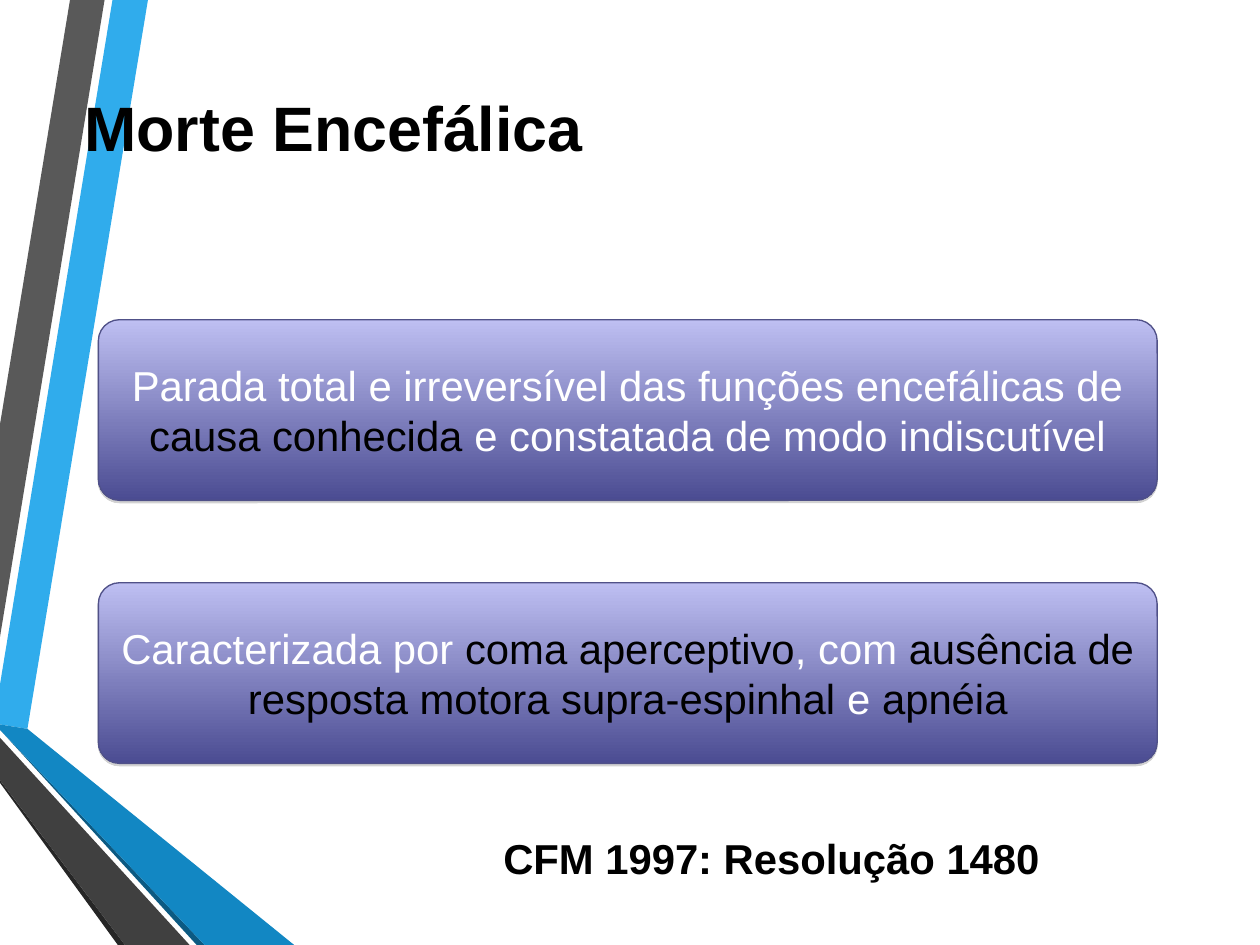
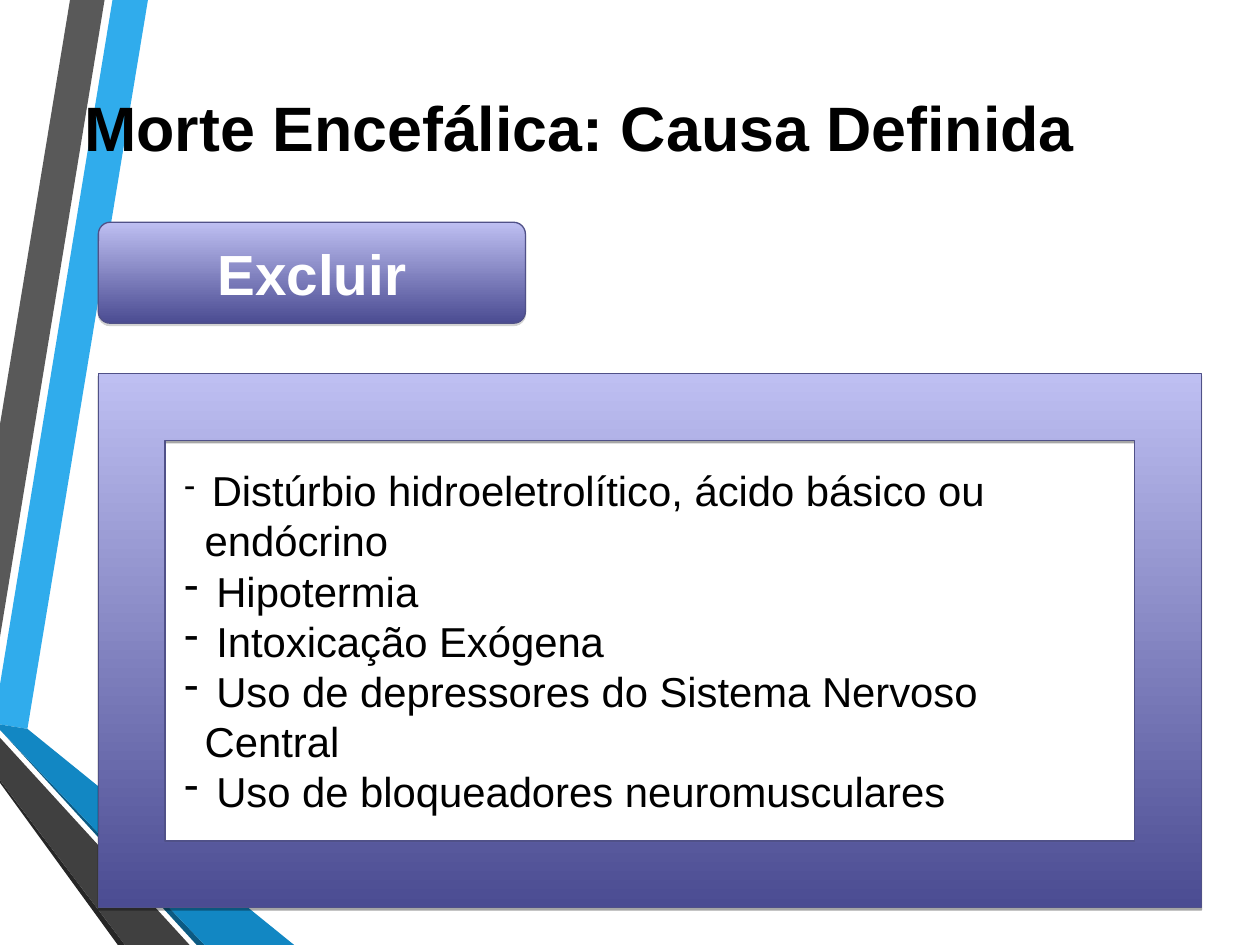
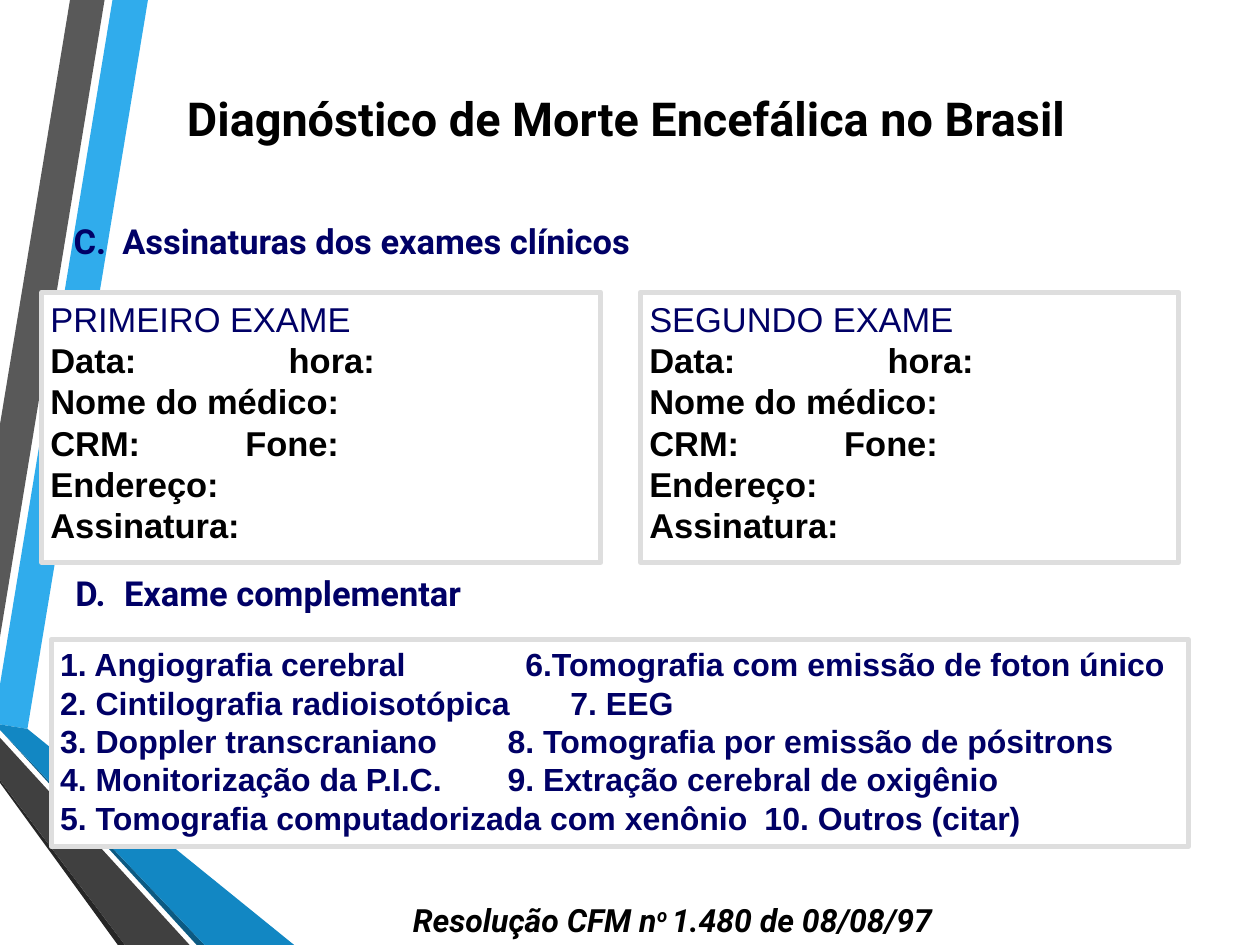
"""Build three slides on the diagnosis of brain death."""
from dataclasses import dataclass, field

from lxml import etree
from pptx import Presentation
from pptx.dml.color import RGBColor
from pptx.enum.shapes import MSO_SHAPE
from pptx.enum.text import MSO_ANCHOR, MSO_AUTO_SIZE, PP_ALIGN
from pptx.oxml.ns import qn
from pptx.util import Inches, Pt

RECTANGLE = MSO_SHAPE.RECTANGLE
ROUNDED = MSO_SHAPE.ROUNDED_RECTANGLE
FRAME = MSO_SHAPE.FRAME
TOP, MIDDLE = MSO_ANCHOR.TOP, MSO_ANCHOR.MIDDLE
LEFT, CENTER = PP_ALIGN.LEFT, PP_ALIGN.CENTER
NO_AUTOFIT = MSO_AUTO_SIZE.NONE
TITLE_ONLY = 5


def font_style(name, size, color, **extra):
    """Return the format values of one type style."""
    return {"name": name, "size": Pt(size), "color": color, **extra}


@dataclass(frozen=True)
class Theme:
    """Colours, type styles and insets shared by the slides."""

    black: str = "000000"
    white: str = "FFFFFF"
    navy: str = "000066"
    panel_top: str = "BEBFF2"
    panel_bottom: str = "4B4C92"
    panel_line: str = "505188"
    form_line: str = "DEDEDE"
    text_insets: tuple = (0.14, 0.08)
    panel_insets: tuple = (0.16, 0.08)
    form_insets: tuple = (0.1, 0.06)
    styles: dict = field(default_factory=lambda: {
        "title": font_style("Arial", 51, "000000", bold=True),
        "form title": font_style("Roboto", 38, "000000", bold=True),
        "panel": font_style("Arial", 34, "FFFFFF"),
        "strong": font_style("Arial", 34, "000000"),
        "panel heading": font_style("Arial", 46, "FFFFFF", bold=True),
        "source": font_style("Arial", 34, "000000", bold=True),
        "bullet gap": font_style("Cambria", 26, "000000"),
        "section": font_style("Roboto", 28, "000066", bold=True),
        "exam": font_style("Arial", 28, "000066"),
        "field": font_style("Arial", 28, "000000", bold=True),
        "test": font_style("Arial", 26, "000066", bold=True),
        "law": font_style("Roboto", 26, "000000", bold=True, italic=True),
    })


THEME = Theme()

RIBBON = (
    ("30ACEC", ((0, 7.73), (0, 8.18), (0.31, 8.23), (1.67, 0), (1.27, 0))),
    ("595959", ((1.18, 0), (0.79, 0), (0, 4.79), (0, 7.19))),
    ("262626", ((0, 8.81), (0, 8.84), (1.33, 10.67), (1.41, 10.67))),
    ("0C5A82", ((0, 8.24), (2.22, 10.67), (2.31, 10.67))),
    ("1287C3", ((0, 8.24), (2.31, 10.67), (3.32, 10.67), (0.31, 8.23), (0, 8.18))),
    ("404040", ((0, 8.81), (1.41, 10.67), (2.14, 10.67), (0, 8.33))),
)


@dataclass
class Line:
    """One paragraph: (text, style) runs, an optional tab stop and bullet."""

    runs: list
    tab: float = 0
    bullet: str = ""


def set_values(target, values):
    """Set each attribute of the target from a dict."""
    for attribute, value in values.items():
        setattr(target, attribute, value)


def inches(*lengths):
    """Convert lengths to EMU."""
    return [Inches(length) for length in lengths]


def rgb(color):
    """Return the colour object of a hex string."""
    return RGBColor.from_string(color)


def style_run(run, style):
    """Apply a named style, superscript when marked with a caret."""
    values = dict(THEME.styles[style.rstrip("^")])
    run.font.color.rgb = rgb(values.pop("color"))
    set_values(run.font, values)
    if style.endswith("^"):
        run.font._element.set("baseline", "31000")


def add_paragraph_marks(paragraph, line):
    """Add the bullet and the tab stop of a line."""
    properties = paragraph._p.get_or_add_pPr()
    if line.bullet:
        properties.set("marL", str(Inches(0.23)))
        properties.set("indent", str(-Inches(0.23)))
        etree.SubElement(properties, qn("a:buChar"), char=line.bullet)
    if line.tab:
        stops = etree.SubElement(properties, qn("a:tabLst"))
        etree.SubElement(stops, qn("a:tab"), pos=str(Inches(line.tab)), algn="l")


def write(shape, lines, insets=THEME.text_insets, anchor=TOP, align=LEFT):
    """Fill a shape with formatted lines."""
    side, end = inches(*insets)
    frame = shape.text_frame
    set_values(frame, {
        "word_wrap": True, "auto_size": NO_AUTOFIT, "vertical_anchor": anchor,
        "margin_left": side, "margin_right": side,
        "margin_top": end, "margin_bottom": end,
    })
    for index, line in enumerate(lines):
        paragraph = frame.add_paragraph() if index else frame.paragraphs[0]
        paragraph.alignment = align
        add_paragraph_marks(paragraph, line)
        for text, style in line.runs:
            run = paragraph.add_run()
            run.text = text
            style_run(run, style)


def add_title(slide, text, box, style="title", **layout):
    """Place and format the title placeholder."""
    title = slide.shapes.title
    set_values(title, dict(zip(("left", "top", "width", "height"), inches(*box))))
    write(title, [Line([(text, style)])], **layout)


def add_text(slide, box, lines):
    """Add a text box."""
    write(slide.shapes.add_textbox(*inches(*box)), lines)


def add_outlined(slide, kind, box, line_color, line_width):
    """Add a preset shape with an outline and no inherited shadow."""
    shape = slide.shapes.add_shape(kind, *inches(*box))
    shape.shadow.inherit = False
    shape.line.color.rgb = rgb(line_color)
    shape.line.width = Pt(line_width)
    return shape


def add_panel(slide, kind, box, corner, shadow_color):
    """Add a violet gradient panel with a thin shadow below."""
    panel = add_outlined(slide, kind, box, THEME.panel_line, 1.07)
    panel.adjustments[0] = corner
    panel.fill.gradient()
    panel.fill.gradient_angle = 270
    for stop, color in zip(panel.fill.gradient_stops, (THEME.panel_top, THEME.panel_bottom)):
        stop.color.rgb = rgb(color)
    effects = panel.element.spPr.find(qn("a:effectLst"))
    shadow = etree.SubElement(effects, qn("a:outerShdw"), blurRad="0",
                              dist=str(Pt(1.8)), dir="5400000", rotWithShape="0")
    tint = etree.SubElement(shadow, qn("a:srgbClr"), val=shadow_color)
    etree.SubElement(tint, qn("a:alpha"), val="35000")
    return panel


def add_statement(slide, box, runs):
    """Add a rounded panel with centred text."""
    panel = add_panel(slide, ROUNDED, box, 0.117, "808080")
    write(panel, [Line(runs)], THEME.panel_insets, MIDDLE, CENTER)


def add_form_box(slide, box, lines):
    """Add a white form box with a grey outline."""
    form = add_outlined(slide, RECTANGLE, box, THEME.form_line, 4.27)
    form.fill.solid()
    form.fill.fore_color.rgb = rgb(THEME.white)
    write(form, lines, THEME.form_insets)


def add_ribbon(layout, slide):
    """Build the folded ribbon and move it to the shared layout."""
    for number, (color, points) in enumerate(RIBBON, start=100):
        start, *others = [inches(*point) for point in points]
        builder = slide.shapes.build_freeform(*start)
        builder.add_line_segments(others, close=True)
        band = builder.convert_to_shape()
        band.shadow.inherit = False
        band.fill.solid()
        band.fill.fore_color.rgb = rgb(color)
        band.line.fill.background()
        band.element.nvSpPr.cNvPr.set("id", str(number))
        layout.shapes.element.append(band.element)


def build_definition(slide):
    """Define brain death."""
    add_title(slide, "Morte Encefálica", (0.81, 0.92, 12.39, 1.01))
    statements = (
        [("Parada total e irreversível das funções encefálicas de ", "panel"),
         ("causa conhecida ", "strong"),
         ("e constatada de modo indiscutível", "panel")],
        [("Caracterizada por ", "panel"), ("coma aperceptivo", "strong"),
         (", com ", "panel"),
         ("ausência de resposta motora supra-espinhal ", "strong"),
         ("e ", "panel"), ("apnéia", "strong")],
    )
    for row, runs in enumerate(statements):
        add_statement(slide, (1.11, 3.61 + row * 2.97, 11.95, 2.04), runs)
    add_text(slide, (5.54, 9.32, 7.52, 0.72),
             [Line([("CFM 1997: Resolução 1480", "source")])])


def build_exclusions(slide):
    """List the conditions to exclude."""
    add_title(slide, "Morte Encefálica: Causa Definida", (0.81, 0.92, 12.39, 1.01))
    add_statement(slide, (1.11, 2.51, 4.82, 1.14), [("Excluir", "panel heading")])
    add_panel(slide, FRAME, (1.11, 4.22, 12.45, 6.03), 0.125, THEME.black)
    conditions = (
        "Hipotermia", "Intoxicação Exógena",
        "Uso de depressores do Sistema Nervoso Central",
        "Uso de bloqueadores neuromusculares",
    )
    first = Line([(" ", "bullet gap"),
                  ("Distúrbio hidroeletrolítico, ácido básico ou endócrino", "strong")],
                 bullet="-")
    others = [Line([(f" {condition}", "strong")], bullet="-") for condition in conditions]
    add_text(slide, (1.94, 5.17, 10.85, 4.17), [first, *others])


def build_form(slide):
    """Show the signature and complementary exam parts of the form."""
    add_title(slide, "Diagnóstico de Morte Encefálica no Brasil", (0.73, 1, 12.68, 0.65),
              "form title", insets=(0, 0), anchor=MIDDLE, align=CENTER)
    fields = (("Data:\thora:", 2.69), ("Nome do médico:", 0), ("CRM:\tFone:", 2.2),
              ("Endereço:", 0), ("Assinatura:", 0))
    exams = (("PRIMEIRO EXAME", 0.47, 6.31), ("SEGUNDO EXAME", 7.23, 6.07))
    for exam, left, width in exams:
        lines = [Line([(label, "field")], tab) for label, tab in fields]
        add_form_box(slide, (left, 3.3, width, 3.05), [Line([(exam, "exam")]), *lines])
    sections = (("C.\tAssinaturas dos exames clínicos", 0.69, 2.41),
                ("D.\tExame complementar", 0.71, 6.38))
    for heading, left, top in sections:
        add_text(slide, (left, top, 8.17, 0.66), [Line([(heading, "section")], 0.55)])
    tests = (
        ("1. Angiografia cerebral\t6.Tomografia com emissão de foton único", 5.25),
        ("2. Cintilografia radioisotópica\t7. EEG", 5.76),
        ("3. Doppler transcraniano\t8. Tomografia por emissão de pósitrons", 5.05),
        ("4. Monitorização da P.I.C.\t9. Extração cerebral de oxigênio", 5.05),
        ("5. Tomografia computadorizada com xenônio\t10. Outros (citar)", 7.95),
    )
    add_form_box(slide, (0.58, 7.22, 12.83, 2.34),
                 [Line([(test, "test")], tab) for test, tab in tests])
    add_text(slide, (4.52, 10.09, 7.34, 0.59),
             [Line([("Resolução CFM n", "law"), ("o ", "law^"),
                    ("1.480 de 08/08/97", "law")])])


def main():
    """Build and save the presentation."""
    presentation = Presentation()
    presentation.slide_width, presentation.slide_height = inches(14.22, 10.67)
    layout = presentation.slide_layouts[TITLE_ONLY]
    builders = (build_definition, build_exclusions, build_form)
    slides = [presentation.slides.add_slide(layout) for _ in builders]
    add_ribbon(layout, slides[0])
    for build, slide in zip(builders, slides):
        build(slide)
    presentation.save("out.pptx")


if __name__ == "__main__":
    main()
